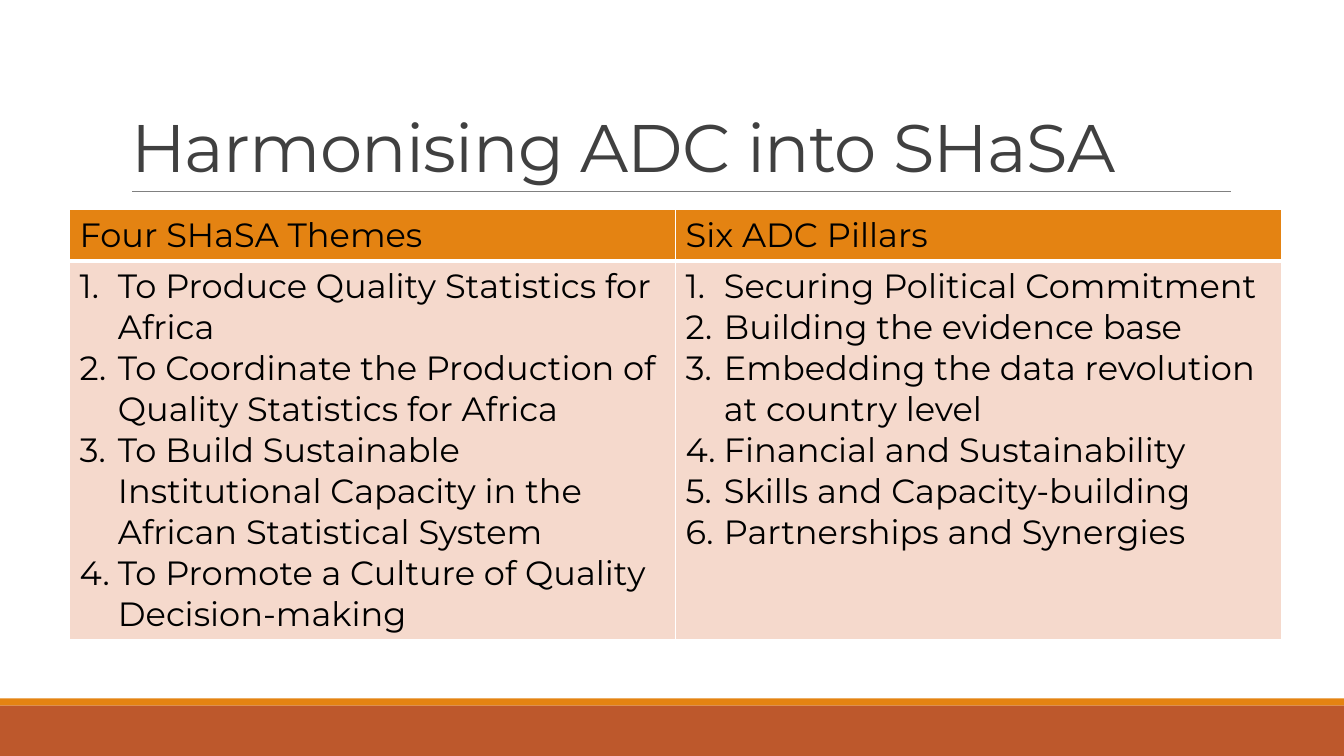
from lxml import etree
from pptx import Presentation
from pptx.dml.color import RGBColor
from pptx.enum.shapes import MSO_CONNECTOR, MSO_SHAPE
from pptx.enum.text import MSO_ANCHOR, PP_ALIGN
from pptx.oxml.ns import qn
from pptx.util import Inches, Pt

RECTANGLE = MSO_SHAPE.RECTANGLE
STRAIGHT = MSO_CONNECTOR.STRAIGHT
BOTTOM = MSO_ANCHOR.BOTTOM
LEFT = PP_ALIGN.LEFT

FONT = "Montserrat"
BLACK = RGBColor(0x00, 0x00, 0x00)
WHITE = RGBColor(0xFF, 0xFF, 0xFF)
CHARCOAL = RGBColor(0x40, 0x40, 0x40)
GREY = RGBColor(0x80, 0x80, 0x80)
ORANGE = RGBColor(0xE4, 0x83, 0x12)
RUST = RGBColor(0xBD, 0x58, 0x2C)
BLUSH = RGBColor(0xF5, 0xD9, 0xCC)

TITLE = "Harmonising ADC into SHaSA"
COLUMNS = {
    "Four SHaSA Themes": [
        "To Produce Quality Statistics for Africa",
        "To Coordinate the Production of Quality Statistics for Africa",
        "To Build Sustainable Institutional Capacity in the African Statistical System",
        "To Promote a Culture of Quality Decision-making",
    ],
    "Six ADC Pillars": [
        "Securing Political Commitment",
        "Building the evidence base",
        "Embedding the data revolution at country level",
        "Financial and Sustainability",
        "Skills and Capacity-building",
        "Partnerships and Synergies",
    ],
}


def add_span(para, text, size, color):
    span = para.add_run()
    span.text = text
    span.font.name = FONT
    span.font.size = Pt(size)
    span.font.bold = False
    span.font.color.rgb = color
    return span


def add_footer(page, left, top, width, height):
    """Thin orange stripe above a rust band."""
    stripe = 0.07
    bands = [(top, stripe, ORANGE), (top + stripe, height - stripe, RUST)]
    for band_top, band_height, color in bands:
        band = page.shapes.add_shape(RECTANGLE, Inches(left), Inches(band_top),
                                     Inches(width), Inches(band_height))
        band.shadow.inherit = False
        band.fill.solid()
        band.fill.fore_color.rgb = color
        band.line.fill.background()


def add_title(page, left, top, width, height):
    """Title placeholder with a thin rule along its bottom edge."""
    title = page.shapes.title
    title.left, title.top = Inches(left), Inches(top)
    title.width, title.height = Inches(width), Inches(height)
    title.text_frame.word_wrap = True
    title.text_frame.vertical_anchor = BOTTOM
    para = title.text_frame.paragraphs[0]
    para.alignment = LEFT
    para.line_spacing = 0.85
    span = add_span(para, TITLE, 48, CHARCOAL)
    span.font._element.set("spc", "-50")

    bottom = Inches(top + height)
    rule = page.shapes.add_connector(STRAIGHT, Inches(left + 0.11), bottom,
                                     Inches(left + width + 0.01), bottom)
    rule.line.color.rgb = GREY
    rule.line.width = Pt(0.5)
    etree.SubElement(rule._element.spPr, qn("a:effectLst"))


def format_cell(cell, color, bottom_width, top_width):
    """Solid fill and white borders; widths in points."""
    cell.fill.solid()
    cell.fill.fore_color.rgb = color
    properties = cell._tc.get_or_add_tcPr()
    widths = {"a:lnL": 1, "a:lnR": 1, "a:lnT": top_width, "a:lnB": bottom_width}
    for position, (side, width) in enumerate(widths.items()):
        border = etree.Element(qn(side), w=str(Pt(width)))
        fill = etree.SubElement(border, qn("a:solidFill"))
        etree.SubElement(fill, qn("a:srgbClr"), val=str(WHITE))
        properties.insert(position, border)


def number_paragraph(para):
    properties = para._p.get_or_add_pPr()
    indent = Inches(0.38)
    properties.set("marL", str(indent))
    properties.set("indent", str(-indent))
    etree.SubElement(properties, qn("a:buFont"), typeface="+mj-lt")
    etree.SubElement(properties, qn("a:buAutoNum"), type="arabicPeriod")


def add_comparison(page, left, top, width, height):
    """One table column per heading, with a numbered list below it."""
    header_height = 0.5
    table = page.shapes.add_table(2, len(COLUMNS), Inches(left), Inches(top),
                                  Inches(width), Inches(height)).table
    table.rows[0].height = Inches(header_height)
    table.rows[1].height = Inches(height - header_height)
    for column, (heading, items) in enumerate(COLUMNS.items()):
        table.columns[column].width = Inches(width / len(COLUMNS))
        header, body = table.cell(0, column), table.cell(1, column)
        format_cell(header, ORANGE, bottom_width=3, top_width=1)
        format_cell(body, BLUSH, bottom_width=1, top_width=3)
        add_span(header.text_frame.paragraphs[0], heading, 24, BLACK)
        frame = body.text_frame
        for index, item in enumerate(items):
            para = frame.add_paragraph() if index else frame.paragraphs[0]
            number_paragraph(para)
            add_span(para, item, 24, BLACK)


def main():
    deck = Presentation()
    deck.slide_width, deck.slide_height = Inches(13.33), Inches(7.5)
    page = deck.slides.add_slide(deck.slide_layouts[5])
    page.background.fill.solid()
    page.background.fill.fore_color.rgb = WHITE
    add_footer(page, 0, 6.93, 13.33, 0.57)
    add_title(page, 1.2, 0.31, 11, 1.59)
    add_comparison(page, 0.69, 2.08, 12.02, 4.25)
    deck.save("out.pptx")


if __name__ == "__main__":
    main()
